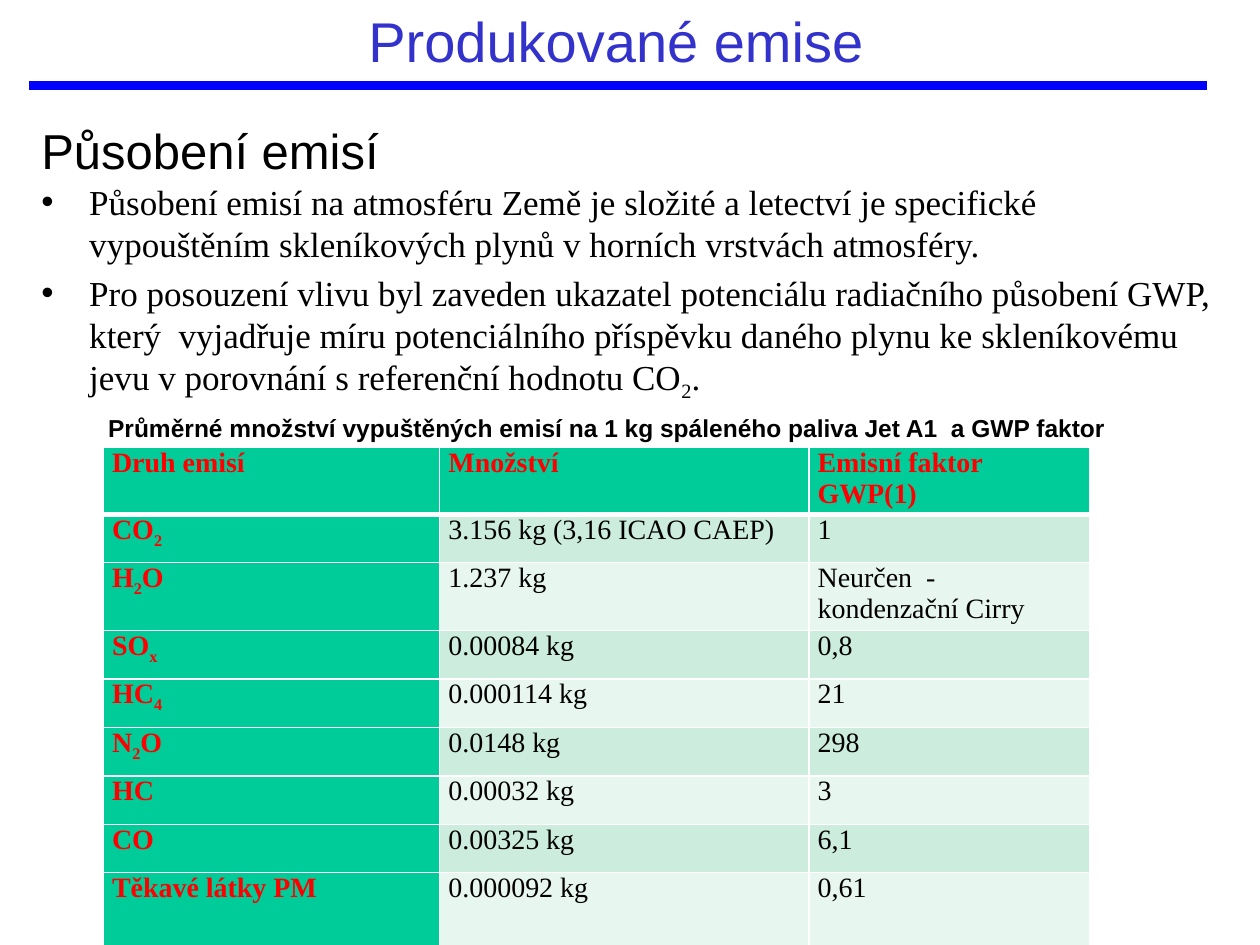
import pptx
import pptx.util
import pptx.dml.color
import pptx.enum.shapes
import pptx.enum.text
import pptx.oxml
import pptx.oxml.ns
from lxml import etree

Inches = pptx.util.Inches
Pt = pptx.util.Pt
qn = pptx.oxml.ns.qn
ALIGN = pptx.enum.text.PP_ALIGN
ANCHOR = pptx.enum.text.MSO_ANCHOR

THEME = {
    "sans": "Arial", "serif": "Times New Roman",
    "title": "3333CC", "rule": "0000FF", "text": "000000", "label": "FF0000",
    "head": "00CC99", "bands": ["CCECDE", "E7F6EF"], "border": "FFFFFF",
    "title_size": 32, "heading_size": 28, "body_size": 20,
    "caption_size": 14, "table_size": 16,
}


def write(p, text, font, size, color, bold=False):
    for i, part in enumerate(text.split("_")):
        r = p.add_run()
        r.text = part
        r.font.name = font
        r.font.size = Pt(size)
        r.font.bold = bold
        r.font.color.rgb = pptx.dml.color.RGBColor.from_string(color)
        if i % 2:
            r.font._element.set("baseline", "-25000")


def add_box(s, left, top, width, height):
    tf = s.shapes.add_textbox(Inches(left), Inches(top), Inches(width), Inches(height)).text_frame
    tf.word_wrap = True
    return tf


prs = pptx.Presentation()
prs.slide_width = Inches(10)
prs.slide_height = Inches(7.5)
s = prs.slides.add_slide(prs.slide_layouts[5])

title = s.shapes.title
title.left, title.top = Inches(0.64), Inches(0.07)
title.width, title.height = Inches(8.5), Inches(0.5)
tf = title.text_frame
tf.vertical_anchor = ANCHOR.MIDDLE
p = tf.paragraphs[0]
p.alignment = ALIGN.CENTER
write(p, "Produkované emise", THEME["sans"], THEME["title_size"], THEME["title"])

rule = s.shapes.add_connector(
    pptx.enum.shapes.MSO_CONNECTOR.STRAIGHT,
    Inches(0.23), Inches(0.68), Inches(9.58), Inches(0.68))
rule.line.color.rgb = pptx.dml.color.RGBColor.from_string(THEME["rule"])
rule.line.width = Pt(5.5)
etree.SubElement(rule._element.spPr, qn("a:effectLst"))

tf = add_box(s, 0.23, 0.91, 9.01, 0.57)
write(tf.paragraphs[0], "Působení emisí", THEME["sans"], THEME["heading_size"], THEME["text"])

bullets = [
    "Působení emisí na atmosféru Země je složité a letectví je specifické vypouštěním "
    "skleníkových plynů v horních vrstvách atmosféry.",
    "Pro posouzení vlivu byl zaveden ukazatel potenciálu radiačního působení GWP, "
    "který  vyjadřuje míru potenciálního příspěvku daného plynu ke skleníkovému "
    "jevu v porovnání s\u00a0referenční hodnotu CO_2_.",
]
tf = add_box(s, 0.23, 1.38, 9.61, 1.85)
for i, text in enumerate(bullets):
    p = tf.add_paragraph() if i else tf.paragraphs[0]
    pPr = p._p.get_or_add_pPr()
    pPr.set("marL", str(Inches(0.38)))
    pPr.set("indent", str(Inches(-0.38)))
    etree.SubElement(pPr, qn("a:buFont"), typeface=THEME["sans"])
    etree.SubElement(pPr, qn("a:buChar"), char="•")
    if i:
        p.space_before = Pt(4)
    write(p, text, THEME["serif"], THEME["body_size"], THEME["text"])

rows = [
    ("Druh emisí", "Množství", "Emisní faktor GWP(1)"),
    ("CO_2", "3.156 kg (3,16 ICAO CAEP)", "1"),
    ("H_2_O", "1.237 kg", "Neurčen  - kondenzační Cirry"),
    ("SO_x", "0.00084 kg", "0,8"),
    ("HC_4", "0.000114 kg", "21"),
    ("N_2_O", "0.0148 kg", "298"),
    ("HC", "0.00032 kg", "3"),
    ("CO", "0.00325 kg", "6,1"),
    ("Těkavé látky PM", "0.000092 kg", "0,61"),
]
col_widths = [2.67, 2.93, 2.23]
row_heights = [0.53, 0.38, 0.54] + [0.385] * 5 + [0.58]
table = s.shapes.add_table(
    len(rows), len(col_widths), Inches(0.82), Inches(3.55),
    Inches(sum(col_widths)), Inches(sum(row_heights))).table
for column, width in zip(table.columns, col_widths):
    column.width = Inches(width)
for i, (values, height) in enumerate(zip(rows, row_heights)):
    table.rows[i].height = Inches(height)
    for j, value in enumerate(values):
        cell = table.cell(i, j)
        cell.margin_left = cell.margin_right = Inches(0.07)
        cell.margin_top = cell.margin_bottom = 0
        label = i == 0 or j == 0
        tcPr = cell._tc.get_or_add_tcPr()
        for side in ("L", "R", "T", "B"):
            thick = (i, side) in ((0, "B"), (1, "T"))
            ln = etree.SubElement(tcPr, qn("a:ln" + side), w=str(Pt(3 if thick else 1)))
            fill = etree.SubElement(ln, qn("a:solidFill"))
            etree.SubElement(fill, qn("a:srgbClr"), val=THEME["border"])
        cell.fill.solid()
        color = THEME["head"] if label else THEME["bands"][(i - 1) % 2]
        cell.fill.fore_color.rgb = pptx.dml.color.RGBColor.from_string(color)
        write(cell.text_frame.paragraphs[0], value, THEME["serif"], THEME["table_size"],
              THEME["label"] if label else THEME["text"], label)

tf = add_box(s, 0.76, 3.23, 8.18, 0.35)
tf.word_wrap = False
write(tf.paragraphs[0],
      "Průměrné množství vypuštěných emisí na 1 kg spáleného paliva Jet A1  a GWP faktor",
      THEME["sans"], THEME["caption_size"], THEME["text"], True)

prs.save("out.pptx")
